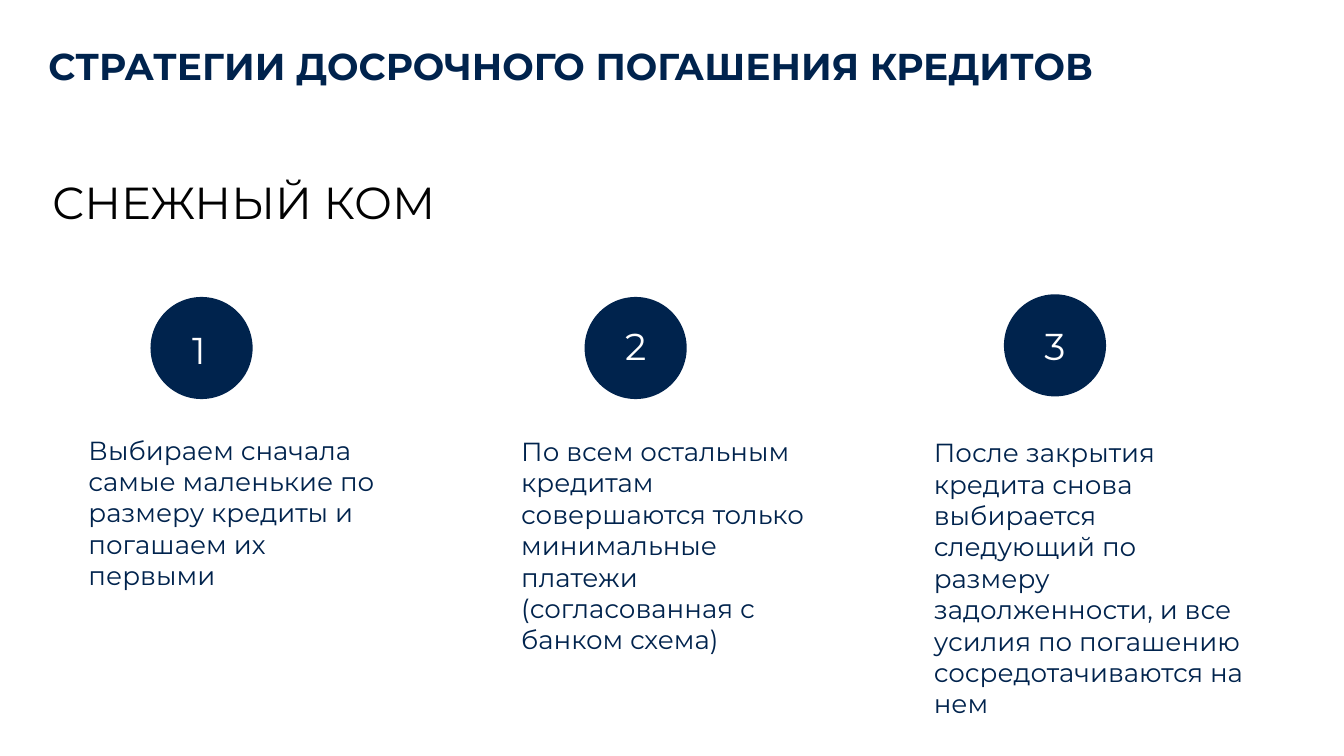
import pptx
import pptx.util
import pptx.dml.color
import pptx.enum.shapes
import pptx.enum.text

Inches = pptx.util.Inches
ALIGN = pptx.enum.text.PP_ALIGN
ANCHOR = pptx.enum.text.MSO_ANCHOR
COLORS = {"navy": "00234D", "white": "FFFFFF", "black": "010101"}


def rgb(name):
    return pptx.dml.color.RGBColor.from_string(COLORS[name])


def write(sp, text, size=14, color="navy", bold=False, align=ALIGN.LEFT,
          wrap=True, tight=False):
    """Fill a shape with one paragraph; tight means no margins, bottom anchor."""
    tf = sp.text_frame
    tf.word_wrap = wrap
    tf.auto_size = pptx.enum.text.MSO_AUTO_SIZE.SHAPE_TO_FIT_TEXT
    tf.vertical_anchor = ANCHOR.BOTTOM if tight else ANCHOR.TOP
    p = tf.paragraphs[0]
    p.alignment = align
    if tight:
        tf.margin_left = tf.margin_right = tf.margin_top = tf.margin_bottom = 0
        p.line_spacing = 0.75
    r = p.add_run()
    r.text = text
    r.font.name = "Montserrat"
    r.font.size = pptx.util.Pt(size)
    r.font.bold = bold
    r.font.color.rgb = rgb(color)


prs = pptx.Presentation()
prs.slide_width = Inches(10)
prs.slide_height = prs.slide_width * 9 // 16
s = prs.slides.add_slide(prs.slide_layouts[5])

title = s.shapes.title
title.left, title.top = Inches(0.36), Inches(0.39)
title.width, title.height = Inches(9.29), Inches(0.26)
write(title, "СТРАТЕГИИ ДОСРОЧНОГО ПОГАШЕНИЯ КРЕДИТОВ", size=20, bold=True, tight=True)

heading = s.shapes.add_textbox(Inches(0.29), Inches(1.25), Inches(3.18), Inches(0.5))
write(heading, "СНЕЖНЫЙ КОМ", size=24, color="black", wrap=False)

# circle (left, top), number (left, top, width), text (left, top, width, height)
steps = [
    ((1.12, 2.21), (1.11, 2.51, 0.74), (0.56, 3.18, 2.42, 1.28),
     "Выбираем сначала самые маленькие по размеру кредиты и погашаем их первыми"),
    ((4.35, 2.21), (4.35, 2.48, 0.76), (3.78, 3.19, 2.37, 1.75),
     "По всем остальным кредитам совершаются только минимальные платежи "
     "(согласованная с банком схема)"),
    ((7.47, 2.19), (7.47, 2.48, 0.76), (6.85, 3.2, 2.57, 2.22),
     "После закрытия кредита снова выбирается следующий по размеру задолженности, "
     "и все усилия по погашению сосредотачиваются на нем"),
]
for number, (circle_at, number_at, text_at, text) in enumerate(steps, 1):
    circle = s.shapes.add_shape(pptx.enum.shapes.MSO_SHAPE.OVAL,
                                *map(Inches, (*circle_at, 0.76, 0.76)))
    circle.shadow.inherit = False
    circle.fill.solid()
    circle.fill.fore_color.rgb = rgb("navy")
    circle.line.fill.background()

    label = s.shapes.add_textbox(*map(Inches, (*number_at, 0.25)))
    write(label, str(number), size=20, color="white", align=ALIGN.CENTER, tight=True)

    write(s.shapes.add_textbox(*map(Inches, text_at)), text)

prs.save("out.pptx")
